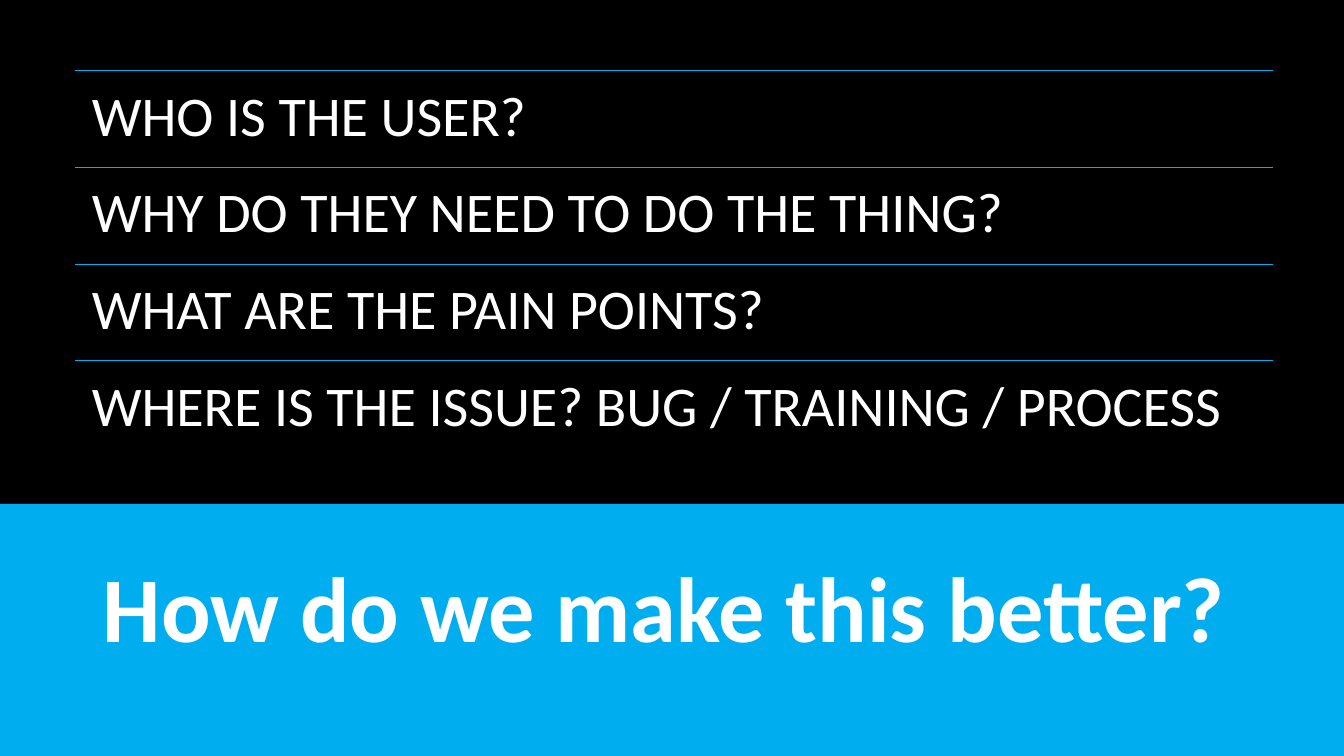
import dataclasses

import pptx
import pptx.dml.color
import pptx.enum.shapes
import pptx.enum.text
import pptx.oxml
import pptx.oxml.ns
import pptx.util

Inches = pptx.util.Inches
Color = pptx.dml.color.RGBColor


@dataclasses.dataclass(frozen=True)
class Theme:
    back: str = "000000"
    accent: str = "00AEEF"
    ink: str = "FFFFFF"
    font: str = "Calibri"
    item: int = 40
    title: int = 66
    rule: float = 0.75


@dataclasses.dataclass(frozen=True)
class Row:
    text: str
    top: float


THEME = Theme()
WIDTH, HEIGHT = 13.33, 7.5
BAND = 5
LEFT, SPAN = 0.74, 11.89
TOP, STEP = 0.7, 0.96
ASKS = (
    "WHO IS THE USER?",
    "WHY DO THEY NEED TO DO THE THING?",
    "WHAT ARE THE PAIN POINTS?",
    "WHERE IS THE ISSUE? BUG / TRAINING / PROCESS",
)


def write(shape, text: str, *, size: float, bold: bool = False,
          inset: float = 0.1, edge: float = 0.05, lead: float = 1.0) -> None:
    """Fill a shape with one left-aligned, top-anchored paragraph."""
    frame = shape.text_frame
    frame.word_wrap = True
    frame.vertical_anchor = pptx.enum.text.MSO_ANCHOR.TOP
    frame.margin_left = frame.margin_right = Inches(inset)
    frame.margin_top = frame.margin_bottom = Inches(edge)
    para = frame.paragraphs[0]
    para.alignment = pptx.enum.text.PP_ALIGN.LEFT
    para.line_spacing = lead
    run = para.add_run()
    run.text = text
    run.font.name = THEME.font
    run.font.size = pptx.util.Pt(size)
    run.font.bold = bold
    run.font.color.rgb = Color.from_string(THEME.ink)


def draw_band(slide) -> None:
    band = slide.shapes.add_shape(
        pptx.enum.shapes.MSO_SHAPE.RECTANGLE,
        Inches(0), Inches(BAND), Inches(WIDTH), Inches(HEIGHT - BAND))
    band.shadow.inherit = False
    band.fill.solid()
    band.fill.fore_color.rgb = Color.from_string(THEME.accent)
    band.line.fill.background()


def draw_row(slide, row: Row) -> None:
    """Draw a thin rule with its question below."""
    rule = slide.shapes.add_connector(
        pptx.enum.shapes.MSO_CONNECTOR.STRAIGHT,
        Inches(LEFT), Inches(row.top), Inches(LEFT + SPAN), Inches(row.top))
    rule.line.color.rgb = Color.from_string(THEME.accent)
    rule.line.width = pptx.util.Pt(THEME.rule)
    rule.element.spPr.append(pptx.oxml.parse_xml(
        f"<a:effectLst {pptx.oxml.ns.nsdecls('a')}/>"))
    box = slide.shapes.add_textbox(
        Inches(LEFT), Inches(row.top), Inches(SPAN), Inches(STEP))
    write(box, row.text, size=THEME.item, inset=0.17, edge=0.17, lead=0.9)


def draw_title(slide, text: str) -> None:
    title = slide.shapes.title
    title.left, title.top = Inches(0.92), Inches(5.41)
    title.width, title.height = Inches(11.39), Inches(1.21)
    write(title, text, size=THEME.title, bold=True)
    title.text_frame.auto_size = pptx.enum.text.MSO_AUTO_SIZE.SHAPE_TO_FIT_TEXT
    # Bring the title in front of the band
    slide.shapes.element.append(title.element)


def main() -> None:
    deck = pptx.Presentation()
    deck.slide_width, deck.slide_height = Inches(WIDTH), Inches(HEIGHT)
    slide = deck.slides.add_slide(deck.slide_layouts.get_by_name("Title Only"))

    # Background and lower band
    slide.background.fill.solid()
    slide.background.fill.fore_color.rgb = Color.from_string(THEME.back)
    draw_band(slide)

    # Ruled questions
    for i, ask in enumerate(ASKS):
        draw_row(slide, Row(ask, TOP + i * STEP))

    # Closing question
    draw_title(slide, "How do we make this better?")
    deck.save("out.pptx")


if __name__ == "__main__":
    main()
